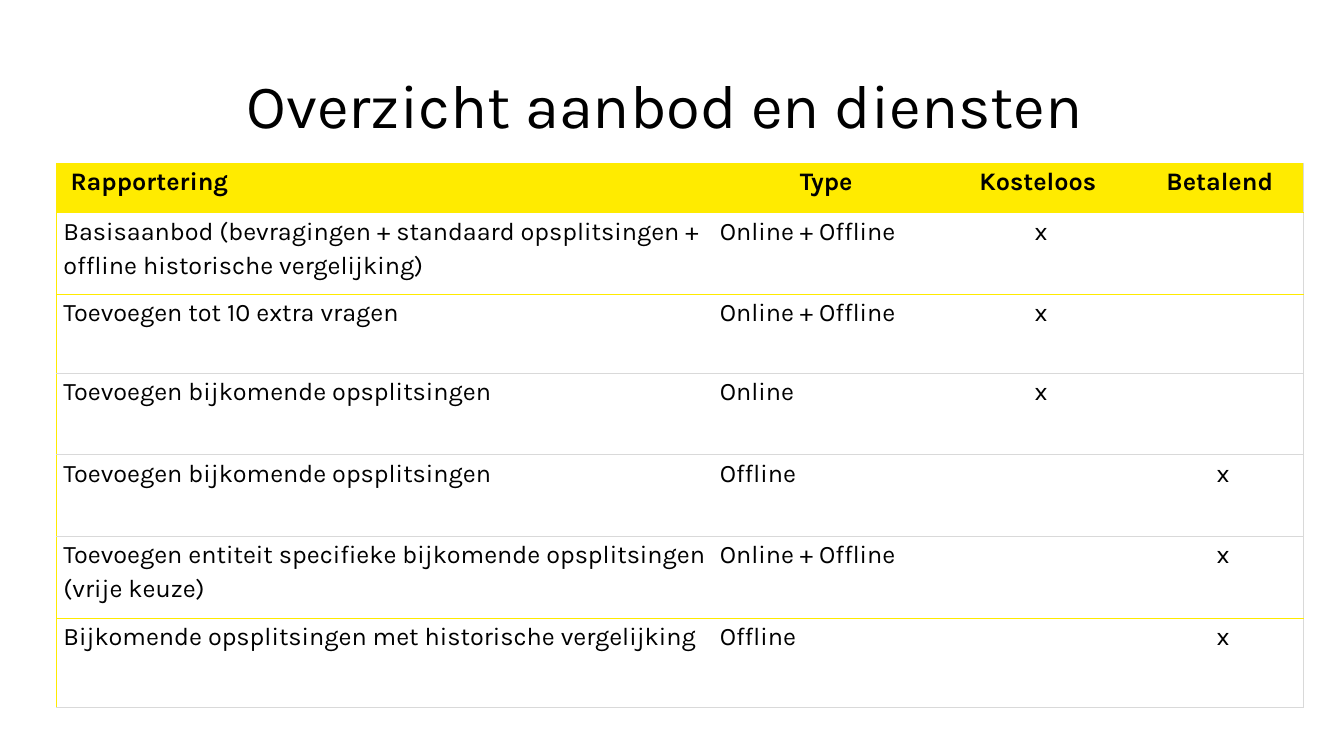
from lxml.etree import SubElement
from pptx import Presentation
from pptx.dml.color import RGBColor
from pptx.enum.text import MSO_ANCHOR, MSO_AUTO_SIZE, PP_ALIGN
from pptx.oxml.ns import qn
from pptx.util import Inches, Pt

FONT = "Karla"
BLACK, WHITE, YELLOW, GREY = "000000", "FFFFFF", "FFEB00", "D9D9D9"

COLUMN_WIDTHS = [6.51, 2.25, 2.01, 1.6]
ROW_HEIGHTS = [0.49, 0.81, 0.78, 0.81, 0.81, 0.81, 0.89]
YELLOW_RULES = {0, 1, 5}  # rows closed by a yellow line

ROWS = [
    ["Rapportering", "Type", "Kosteloos ", "Betalend "],
    ["Basisaanbod (bevragingen + standaard opsplitsingen + "
     "offline historische vergelijking)", "Online + Offline", "x", ""],
    ["Toevoegen tot 10 extra vragen", "Online + Offline ", "x", ""],
    ["Toevoegen bijkomende opsplitsingen", "Online", "x", ""],
    ["Toevoegen bijkomende opsplitsingen", "Offline ", "", "x"],
    ["Toevoegen entiteit specifieke bijkomende opsplitsingen (vrije keuze)",
     "Online + Offline", "", "x"],
    ["Bijkomende opsplitsingen met historische vergelijking",
     "Offline ", "", "x"],
]


def color(value):
    return RGBColor.from_string(value)


def add_span(para, text, size, bold=False):
    span = para.add_run()
    span.text = text
    span.font.name = FONT
    span.font.size = Pt(size)
    span.font.bold = bold
    span.font.color.rgb = color(BLACK)


def set_border(cell, side, value):
    """Draw one side of a cell; a value of None leaves it without a line."""
    line = SubElement(cell._tc.get_or_add_tcPr(), qn(f"a:ln{side}"), w=str(Pt(0.5)))
    if value is None:
        SubElement(line, qn("a:noFill"))
    else:
        fill = SubElement(line, qn("a:solidFill"))
        SubElement(fill, qn("a:srgbClr"), val=value)


def rule_below(row):
    return YELLOW if row in YELLOW_RULES else GREY


def add_title(page, text):
    title = page.shapes.title
    title.left, title.top = Inches(0.41), Inches(0.47)
    title.width, title.height = Inches(12.52), Inches(1.33)
    frame = title.text_frame
    frame.auto_size = MSO_AUTO_SIZE.NONE
    frame.word_wrap = True
    frame.vertical_anchor = MSO_ANCHOR.MIDDLE
    frame.margin_left = frame.margin_right = 0
    frame.margin_top = frame.margin_bottom = 0
    para = frame.paragraphs[0]
    para.alignment = PP_ALIGN.CENTER
    para.line_spacing = Pt(38)
    add_span(para, text, 44)


def format_cell(cell, row, column, text):
    header = row == 0
    last_column = column == len(COLUMN_WIDTHS) - 1

    # Borders, then fill
    set_border(cell, "L", YELLOW if column == 0 else None)
    set_border(cell, "R", GREY if last_column else None)
    set_border(cell, "T", YELLOW if header else rule_below(row - 1))
    set_border(cell, "B", rule_below(row))
    cell.fill.solid()
    cell.fill.fore_color.rgb = color(YELLOW if header else WHITE)

    # Text, with the first heading slightly indented
    cell.margin_left = Inches(0.14 if header and column == 0 else 0.07)
    cell.margin_right = Inches(0.07)
    cell.margin_top = cell.margin_bottom = 0
    para = cell.text_frame.paragraphs[0]
    if column > 1 or (header and column == 1):
        para.alignment = PP_ALIGN.CENTER
    else:
        para.alignment = PP_ALIGN.LEFT
    para.line_spacing = 1.15
    para.space_after = Pt(10)
    if text:
        add_span(para, text, 18, bold=header)


def add_services_table(page):
    frame = page.shapes.add_table(
        len(ROWS), len(COLUMN_WIDTHS), Inches(0.56), Inches(1.62),
        Inches(sum(COLUMN_WIDTHS)), Inches(sum(ROW_HEIGHTS)))
    table = frame.table
    table.first_row = table.horz_banding = False
    for column, width in zip(table.columns, COLUMN_WIDTHS):
        column.width = Inches(width)
    for row, height in zip(table.rows, ROW_HEIGHTS):
        row.height = Inches(height)
    for row, texts in enumerate(ROWS):
        for column, text in enumerate(texts):
            format_cell(table.cell(row, column), row, column, text)


def main():
    deck = Presentation()
    deck.slide_width, deck.slide_height = Inches(13.33), Inches(7.5)
    page = deck.slides.add_slide(deck.slide_layouts[5])
    add_title(page, "Overzicht aanbod en diensten ")
    add_services_table(page)
    deck.save("out.pptx")


if __name__ == "__main__":
    main()
